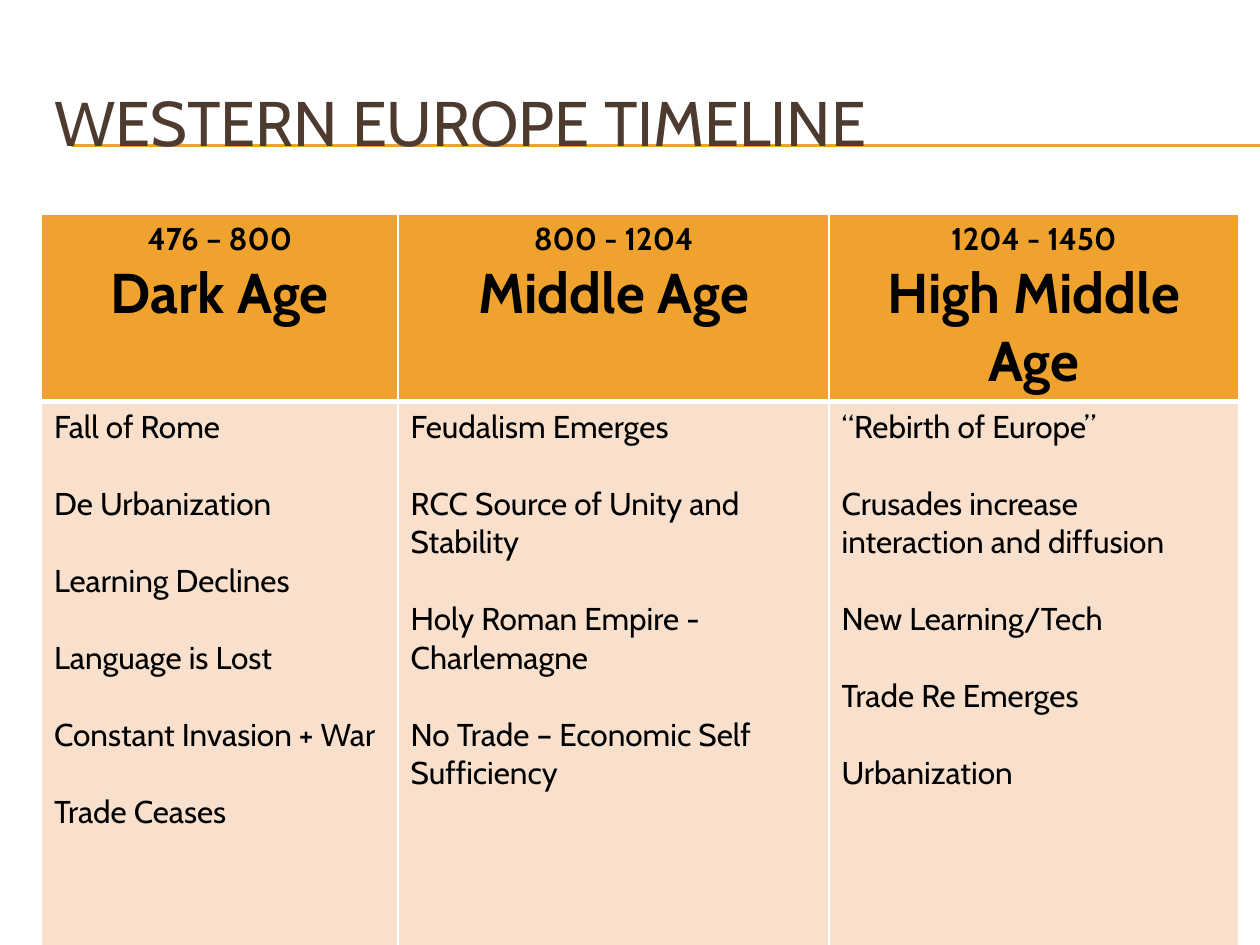
from pptx import Presentation
from pptx.dml.color import RGBColor as RGB
from pptx.enum.shapes import MSO_CONNECTOR as LINK
from pptx.enum.text import MSO_ANCHOR as ANCHOR, MSO_AUTO_SIZE as FIT, PP_ALIGN as ALIGN
from pptx.oxml import parse_xml
from pptx.oxml.ns import nsdecls
from pptx.util import Inches, Pt

GOLD = RGB(0xF0, 0xA2, 0x2E)
PEACH = RGB(0xF9, 0xE0, 0xCD)
BROWN = RGB(0x4E, 0x3B, 0x30)
BLACK = RGB(0, 0, 0)
WHITE = RGB(0xFF, 0xFF, 0xFF)
FONT = "Cabin"

AGES = [
    ("476 – 800", "Dark Age", 28.3,
     ["Fall of Rome", "De Urbanization", "Learning Declines",
      "Language is Lost", "Constant Invasion + War", "Trade Ceases"]),
    ("800 - 1204", "Middle Age", 34.2,
     ["Feudalism Emerges", "RCC Source of Unity and Stability",
      "Holy Roman Empire - Charlemagne",
      "No Trade – Economic Self Sufficiency"]),
    ("1204 - 1450", "High Middle Age", 32.5,
     ["“Rebirth of Europe”", "Crusades increase interaction and diffusion",
      "New Learning/Tech", "Trade Re Emerges", "Urbanization"]),
]


def write(frame, text, size=18, color=BLACK, bold=False, align=ALIGN.LEFT, gap=0):
    first = not frame.text
    para = frame.paragraphs[0] if first else frame.add_paragraph()
    para.alignment = align
    para.space_before = Pt(0 if first else gap)
    run = para.add_run()
    run.text = text
    font = run.font
    font.name, font.size, font.bold = FONT, Pt(size), bold
    font.color.rgb = color


class Deck:
    """Hold the style and current slide, on a grid of 100 columns by 75 rows."""

    def __init__(self):
        self.prs = Presentation()
        self.prs.slide_width, self.prs.slide_height = self.grid(100, 75)
        self.slide = self.prs.slides.add_slide(self.prs.slide_layouts[5])
        self.shapes = self.slide.shapes

    def grid(self, *units):
        return [Inches(unit / 10) for unit in units]

    def rule(self, left, right, row):
        line = self.shapes.add_connector(LINK.STRAIGHT, *self.grid(left, row, right, row))
        line.line.color.rgb = GOLD
        line.line.width = Pt(0.75)
        line._element.spPr.append(parse_xml(f"<a:effectLst {nsdecls('a')}/>"))

    def title(self, text, *box):
        title = self.shapes.title
        title.left, title.top, title.width, title.height = self.grid(*box)
        frame = title.text_frame
        frame.auto_size = FIT.NONE
        frame.vertical_anchor = ANCHOR.MIDDLE
        write(frame, text, size=36, color=BROWN)
        self.shapes._spTree.append(title._element)

    def edge(self, cell, **widths):
        props = cell._tc.get_or_add_tcPr()
        for side in "LRTB":
            width = Pt(widths.get(side, 1))
            props.append(parse_xml(
                f'<a:ln{side} {nsdecls("a")} w="{width}"><a:solidFill>'
                f'<a:srgbClr val="{WHITE}"/></a:solidFill></a:ln{side}>'))

    def fill(self, cell, color):
        cell.fill.solid()
        cell.fill.fore_color.rgb = color

    def table(self, ages, left, top, rows):
        width = sum(age[2] for age in ages)
        table = self.shapes.add_table(
            len(rows), len(ages), *self.grid(left, top, width, sum(rows))).table
        for row, size in zip(table.rows, self.grid(*rows)):
            row.height = size
        for col, (dates, name, span, facts) in enumerate(ages):
            table.columns[col].width = self.grid(span)[0]
            head, body = table.cell(0, col), table.cell(1, col)
            self.edge(head, B=3)
            self.edge(body, T=3)
            self.fill(head, GOLD)
            self.fill(body, PEACH)
            for text, size in ((dates, 18), (name, 32)):
                write(head.text_frame, text, size=size, bold=True, align=ALIGN.CENTER)
            for fact in facts:
                write(body.text_frame, fact, gap=22)


def main():
    deck = Deck()
    for row in (11.5, 11.6):
        deck.rule(5.6, 100, row)
    deck.title("WESTERN EUROPE TIMELINE", 3.3, 5, 95, 9.2)
    deck.table(AGES, 3.3, 17, (9.3, 46.2))
    deck.prs.save("out.pptx")


if __name__ == "__main__":
    main()
